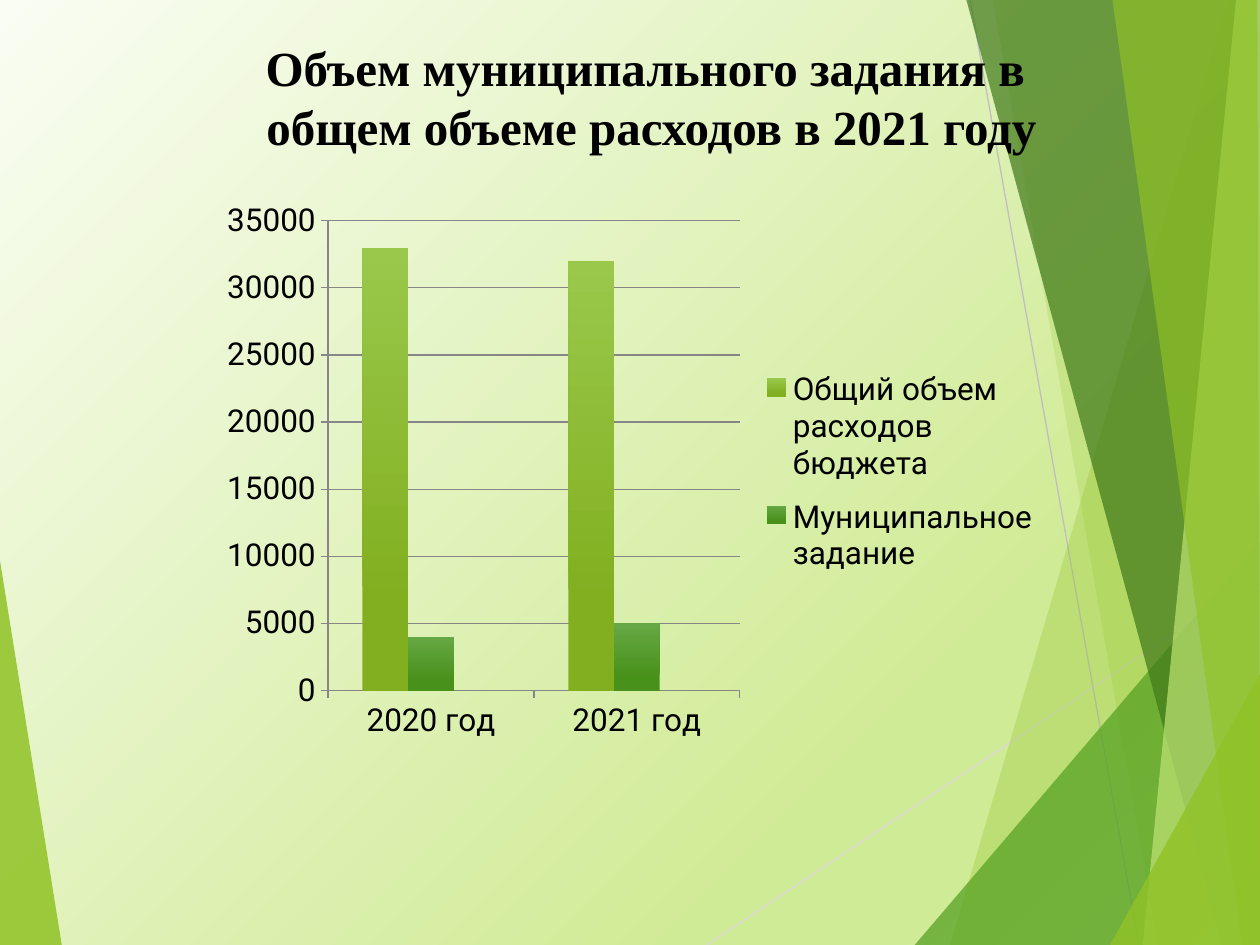
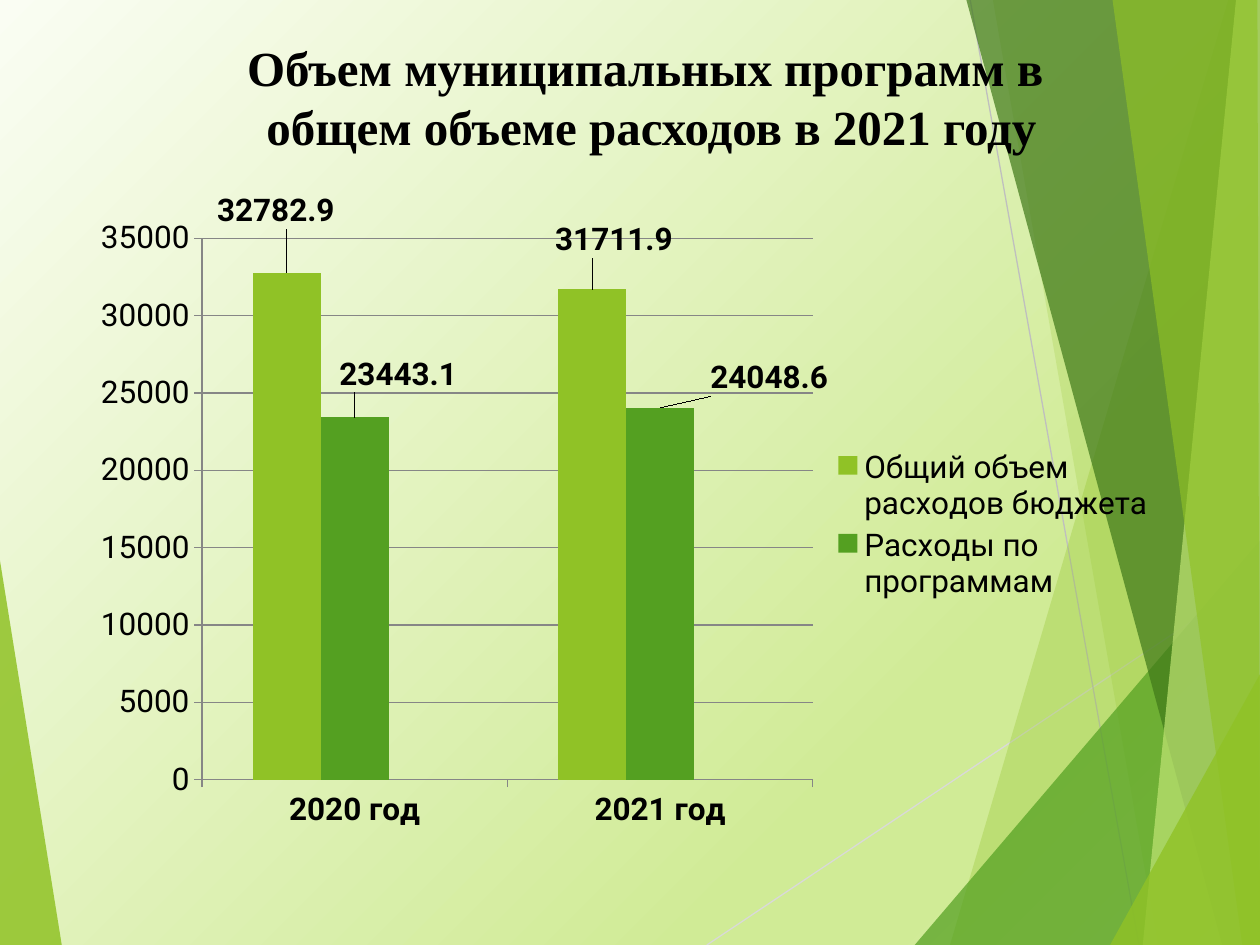
"""Build two slides of budget column charts on a shared green backdrop."""
from lxml import etree
from pptx import Presentation
from pptx.chart.data import CategoryChartData as Data
from pptx.dml.color import RGBColor as RGB
from pptx.enum.chart import XL_CHART_TYPE as Kind
from pptx.enum.chart import XL_LABEL_POSITION as Spot
from pptx.enum.chart import XL_LEGEND_POSITION as Side
from pptx.enum.chart import XL_TICK_MARK as Tick
from pptx.enum.shapes import MSO_CONNECTOR as Link
from pptx.enum.text import MSO_ANCHOR as Anchor
from pptx.enum.text import MSO_AUTO_SIZE as Fit
from pptx.enum.text import PP_ALIGN as Align
from pptx.oxml.ns import qn
from pptx.util import Inches, Pt

INK = {
    "text": "000000", "axis": "868686", "lime": "90C226", "leaf": "54A021",
    "gold": "E6B91E", "moss": "3F7819", "pale": "C0E474",
    "rule": "D9D9D9", "edge": "BFBFBF",
}
SKY = [(0, "FAFDF3"), (74, "D0EB96"), (83, "D0EB96"), (100, "DFF1B9")]
SHADE = {"lime": ("82AF20", "99C84B"), "leaf": ("48911B", "66A845")}
SERIF, SANS = "Times New Roman", "Roboto"
YEARS = ["2020 год", "2021 год"]
TOTAL = "Общий объем расходов бюджета"
RULES = [((5.61, 7.5), (10, 4.57), "rule"), ((7.7, 0), (9.04, 7.5), "edge")]
LEFT = ("lime", 85, [(0, 4.45), (0.49, 7.5), (0, 7.5)])
RIGHT = [
    ("lime", 30, [(9.75, 0), (7.54, 7.5), (10, 7.5), (10, 0)]),
    ("lime", 20, [(7.88, 0), (9.19, 7.5), (10, 7.5), (10, 0)]),
    ("leaf", 72, [(7.26, 7.5), (10, 4.29), (10, 7.5)]),
    ("moss", 70, [(7.67, 0), (9.7, 7.5), (10, 7.5), (10, 0)]),
    ("pale", 70, [(9.81, 0), (9.07, 7.5), (10, 7.5), (10, 0)]),
    ("lime", 65, [(8.83, 0), (9.86, 7.5), (10, 7.5), (9.98, 0)]),
    ("lime", 80, [(8.81, 7.5), (10, 5.35), (10, 7.5)]),
]


def tint(name):
    """Return the named colour."""
    return RGB.from_string(INK[name])


def node(root, tag, **attrs):
    """Append an XML element with the given attributes."""
    kid = etree.SubElement(root, qn(tag))
    for key, val in attrs.items():
        kid.set(key, str(val))
    return kid


def style(font, size, name, bold=False):
    """Set face, size, weight and colour of a font."""
    font.name, font.size, font.bold = name, Pt(size), bold
    font.color.rgb = tint("text")


def add_sky(base):
    """Give a layout the diagonal gradient background."""
    fill = base.background.fill
    fill.gradient()
    fill.gradient_angle = 315
    stops = base.element.xpath(".//p:bg//a:gsLst")[0]
    for old in list(stops):
        stops.remove(old)
    for pos, code in SKY:
        stop = node(stops, "a:gs", pos=pos * 1000)
        node(stop, "a:srgbClr", val=code)


def add_shard(slide, name, alpha, points):
    """Draw one translucent polygon."""
    spots = [(Inches(x), Inches(y)) for x, y in points]
    pen = slide.shapes.build_freeform(*spots[0])
    pen.add_line_segments(spots[1:], close=True)
    shard = pen.convert_to_shape()
    shard.shadow.inherit = False
    shard.fill.solid()
    shard.fill.fore_color.rgb = tint(name)
    shard.line.fill.background()
    color = shard.element.spPr.find(qn("a:solidFill"))[0]
    node(color, "a:alpha", val=alpha * 1000)
    return shard


def add_rule(slide, start, end, name):
    """Draw one thin straight line."""
    ends = [Inches(v) for v in start + end]
    rule = slide.shapes.add_connector(Link.STRAIGHT, *ends)
    rule.line.color.rgb = tint(name)
    rule.line.width = Pt(0.75)
    node(rule.element.spPr, "a:effectLst")
    return rule


def add_decor(slide, base):
    """Draw the backdrop shapes and hand them to the layout."""
    parts = [add_shard(slide, *LEFT)]
    parts += [add_rule(slide, *rule) for rule in RULES]
    parts += [add_shard(slide, *shard) for shard in RIGHT]
    tree = base.element.cSld.spTree
    for num, part in enumerate(parts):
        part.element.xpath(".//p:cNvPr")[0].set("id", str(100 + num))
        tree.insert(2 + num, part.element)


def set_title(slide, lines):
    """Place the title and fill it line by line."""
    title = slide.shapes.title
    title.left, title.top = Inches(0.67), Inches(0.25)
    title.width, title.height = Inches(9), Inches(1.25)
    frame = title.text_frame
    frame.word_wrap, frame.auto_size = True, Fit.NONE
    frame.vertical_anchor = Anchor.TOP
    for num, line in enumerate(lines):
        para = frame.add_paragraph() if num else frame.paragraphs[0]
        para.alignment = Align.CENTER
        para.space_before = Pt(0)
        run = para.add_run()
        run.text = line
        style(run.font, 28, SERIF, True)


def make_place(x, y, w=None, h=None, inner=False):
    """Return a manual layout in fractions of the chart."""
    place = etree.Element(qn("c:layout"))
    man = node(place, "c:manualLayout")
    if inner:
        node(man, "c:layoutTarget", val="inner")
    if w:
        node(man, "c:xMode", val="edge")
        node(man, "c:yMode", val="edge")
    for key, val in zip("xywh", (x, y, w, h)):
        if val is not None:
            node(man, "c:" + key, val=val)
    return place


def add_chart(slide, box, rows, plot_at, key_at, bold=False):
    """Add a column chart with a placed plot and legend."""
    data = Data()
    data.categories = YEARS
    for name, vals in rows:
        data.add_series(name, vals)
    data.add_series("Series 3", [None, None])
    frame = slide.shapes.add_chart(
        Kind.COLUMN_CLUSTERED, *[Inches(v) for v in box], data)
    chart = frame.chart
    chart.has_title = False
    style(chart.font, 18, SANS)
    plot = chart.plots[0]
    plot.gap_width, plot.overlap, plot.vary_by_categories = 150, 0, False
    for row, name in zip(plot.series, ("lime", "leaf", "gold")):
        row.format.fill.solid()
        row.format.fill.fore_color.rgb = tint(name)
    set_axes(chart, bold)
    set_key(chart, key_at)
    area = chart.element.chart.plotArea
    for old in area.findall(qn("c:layout")):
        area.remove(old)
    area.insert(0, make_place(*plot_at, inner=True))
    return plot


def set_axes(chart, bold):
    """Format both axes and the grid."""
    cat, val = chart.category_axis, chart.value_axis
    val.minimum_scale, val.maximum_scale, val.major_unit = 0, 35000, 5000
    val.has_major_gridlines = True
    for axis, heavy in ((cat, bold), (val, False)):
        axis.major_tick_mark, axis.minor_tick_mark = Tick.OUTSIDE, Tick.NONE
        axis.tick_labels.number_format = "General"
        axis.tick_labels.number_format_is_linked = False
        style(axis.tick_labels.font, 18, SANS, heavy)
    for part in (cat, val, val.major_gridlines):
        part.format.line.color.rgb = tint("axis")
        part.format.line.width = Pt(0.75)


def set_key(chart, place):
    """Place the legend and hide its empty third entry."""
    chart.has_legend = True
    key = chart.legend
    key.position, key.include_in_layout = Side.RIGHT, False
    style(key.font, 18, SANS)
    root = key._element
    for old in root.findall(qn("c:layout")):
        root.remove(old)
    entry = etree.Element(qn("c:legendEntry"))
    node(entry, "c:idx", val=2)
    node(entry, "c:delete", val=1)
    pos = root.find(qn("c:legendPos"))
    pos.addnext(entry)
    entry.addnext(make_place(*place))


def shade(plot):
    """Fill the visible columns with vertical gradients."""
    for row, name in zip(plot.series, SHADE):
        fill = row.format.fill
        fill.gradient()
        fill.gradient_angle = 90
        for stop, code, pos in zip(fill.gradient_stops, SHADE[name], (0.2, 1)):
            stop.color.rgb = RGB.from_string(code)
            stop.position = pos


def add_labels(row, shifts, lead):
    """Show bold values, each moved from its column's top."""
    for num in range(len(shifts)):
        label = row.points[num].data_label
        style(label.font, 18, SANS, True)
        label.position = Spot.OUTSIDE_END
    labels = row.data_labels
    labels.show_value = True
    style(labels.font, 18, SANS, True)
    root = labels._element
    for item, shift in zip(root.findall(qn("c:dLbl")), shifts):
        item.find(qn("c:idx")).addnext(make_place(*shift))
    for old in root.findall(qn("c:showLeaderLines")):
        root.remove(old)
    space = "http://schemas.microsoft.com/office/drawing/2012/chart"
    ext = etree.SubElement(
        node(root, "c:extLst"), qn("c:ext"), nsmap={"c15": space})
    ext.set("uri", "{CE6537A1-D6FC-4f65-9D91-7224C49458BB}")
    line = etree.SubElement(ext, "{%s}showLeaderLines" % space)
    line.set("val", str(int(lead)))


def main():
    """Build and save the deck."""
    deck = Presentation()
    deck.slide_width, deck.slide_height = Inches(10), Inches(7.5)
    base = deck.slide_layouts[5]
    add_sky(base)
    task, plan = [deck.slides.add_slide(base) for _ in range(2)]
    add_decor(task, base)
    tail = "общем объеме расходов в 2021 году"

    set_title(task, ["Объем муниципального задания в ", tail])
    rows = [(TOTAL, [33000, 32000]), ("Муниципальное задание", [4000, 5000])]
    plot = add_chart(task, (1.67, 1.53, 6.67, 4.44), rows,
                     (0.14, 0.05, 0.49, 0.84), (0.65, 0.29, 0.34, 0.42))
    shade(plot)

    set_title(plan, ["Объем муниципальных программ в ", tail])
    rows = [(TOTAL, [32782.9, 31711.9]),
            ("Расходы по программам", [23443.1, 24048.6])]
    plot = add_chart(plan, (0.65, 1.53, 8.66, 5.17), rows,
                     (0.11, 0.06, 0.56, 0.84), (0.68, 0.38, 0.31, 0.25), True)
    total, spent = list(plot.series)[:2]
    add_labels(total, [(-0.01, -0.06), (0.02, -0.04)], False)
    add_labels(spent, [(0.04, -0.03), (0.1, -0.01)], True)
    deck.save("out.pptx")


if __name__ == "__main__":
    main()
